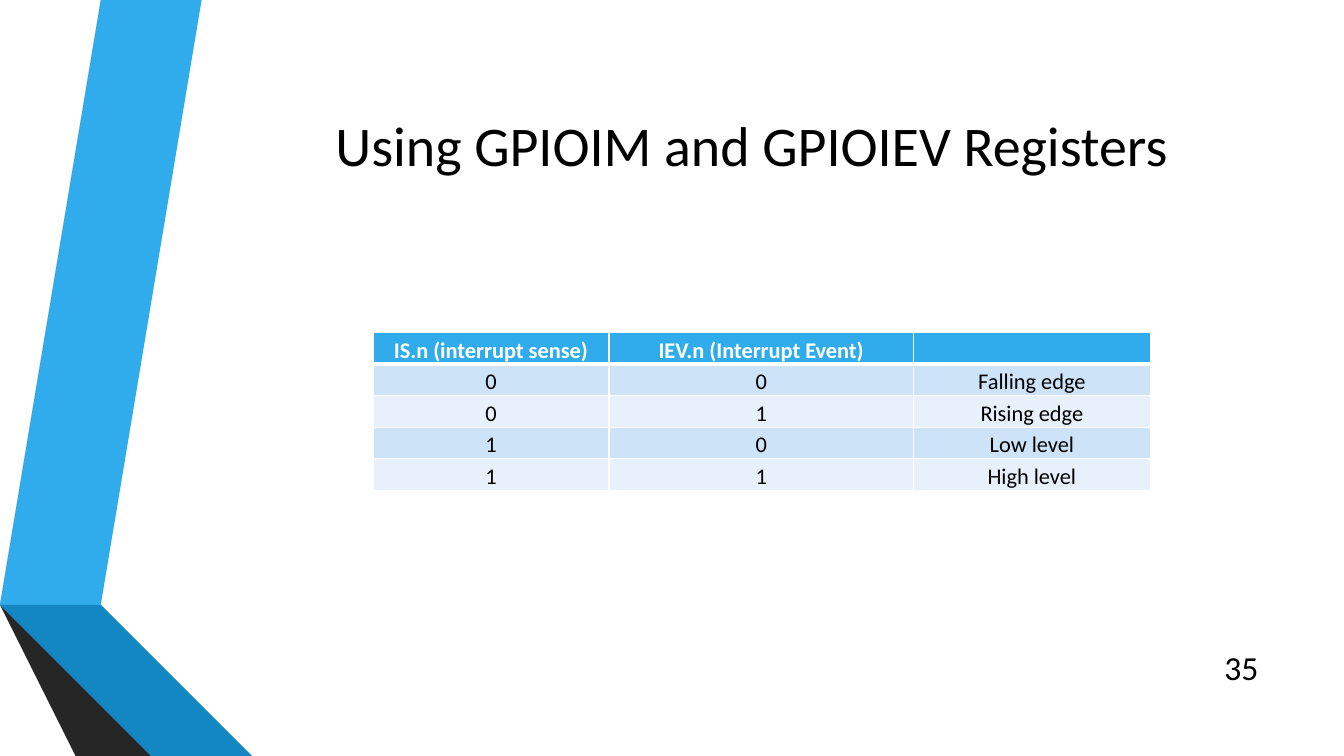
from dataclasses import dataclass

from lxml import etree
from pptx import Presentation
from pptx import util as u
from pptx.dml.color import RGBColor
from pptx.enum import text
from pptx.oxml import ns


@dataclass(frozen=True)
class Theme:
    font: str = "Calibri"
    ink: str = "000000"
    paper: str = "FFFFFF"
    blue: str = "30ACEC"
    blue_mid: str = "1287C3"
    blue_deep: str = "0C5A82"
    grey: str = "595959"
    grey_mid: str = "404040"
    grey_deep: str = "262626"
    bands: tuple = ("CDE3F8", "E8F1FB")
    title_size: int = 40
    number_size: int = 24
    table_size: int = 16


class SlideBuilder:
    def __init__(self, deck, theme):
        self.theme = theme
        self.page = deck.slides.add_slide(deck.slide_layouts[5])

    def style(self, para, size, align, color, bold=False):
        para.alignment = align
        para.font.name = self.theme.font
        para.font.size = u.Pt(size)
        para.font.bold = bold
        para.font.color.rgb = RGBColor.from_string(color)

    def place(self, box, left, top, width, height):
        box.left, box.top = u.Inches(left), u.Inches(top)
        box.width, box.height = u.Inches(width), u.Inches(height)

    def ribbon(self, color, points):
        """Draw a closed, filled outline through points given in inches."""
        builder = self.page.shapes.build_freeform(*points[0], scale=u.Inches(1))
        builder.add_line_segments(points[1:], close=True)
        shape = builder.convert_to_shape()
        shape.shadow.inherit = False
        shape.fill.solid()
        shape.fill.fore_color.rgb = RGBColor.from_string(color)
        shape.line.fill.background()

    def title(self, words, *area):
        box = self.page.shapes.title
        self.place(box, *area)
        self.fill_text(box.text_frame, words, self.theme.title_size, text.PP_ALIGN.CENTER)

    def page_number(self, number, *area):
        box = self.page.shapes.add_textbox(0, 0, 0, 0)
        self.place(box, *area)
        self.fill_text(box.text_frame, number, self.theme.number_size, text.PP_ALIGN.RIGHT)

    def fill_text(self, frame, words, size, align):
        frame.text = words
        frame.word_wrap = True
        frame.auto_size = text.MSO_AUTO_SIZE.NONE
        frame.vertical_anchor = text.MSO_ANCHOR.MIDDLE
        self.style(frame.paragraphs[0], size, align, self.theme.ink)

    def table(self, left, top, widths, row_height, rows):
        grid = self.page.shapes.add_table(
            len(rows), len(widths), u.Inches(left), u.Inches(top),
            u.Inches(sum(widths)), u.Inches(row_height * len(rows))).table
        for column, width in zip(grid.columns, widths):
            column.width = u.Inches(width)
        for r, row in enumerate(rows):
            grid.rows[r].height = u.Inches(row_height)
            for c, words in enumerate(row):
                self.cell(grid.cell(r, c), words, r)

    def cell(self, cell, words, row):
        theme = self.theme
        header = row == 0
        cell.text = words
        cell.margin_left = cell.margin_right = u.Inches(0.07)
        cell.margin_top = cell.margin_bottom = 0
        para = cell.text_frame.paragraphs[0]
        para.line_spacing = 1.15
        self.style(para, theme.table_size, text.PP_ALIGN.CENTER,
                   theme.paper if header else theme.ink, header)
        self.borders(cell, bottom=3 if header else 1, top=3 if row == 1 else 1)
        cell.fill.solid()
        color = theme.blue if header else theme.bands[(row - 1) % 2]
        cell.fill.fore_color.rgb = RGBColor.from_string(color)

    def borders(self, cell, bottom, top):
        properties = cell._tc.get_or_add_tcPr()
        for side, points in (("L", 1), ("R", 1), ("T", top), ("B", bottom)):
            line = etree.SubElement(properties, ns.qn(f"a:ln{side}"), w=str(u.Pt(points)))
            fill = etree.SubElement(line, ns.qn("a:solidFill"))
            etree.SubElement(fill, ns.qn("a:srgbClr"), val=self.theme.paper)


def main():
    deck = Presentation()
    deck.slide_width, deck.slide_height = u.Inches(13.33), u.Inches(7.5)
    theme = Theme()
    slide = SlideBuilder(deck, theme)

    ribbons = [
        (theme.blue, [(0.5, 5.78), (0.77, 5.83), (1.73, 0), (1.45, 0)]),
        (theme.grey, [(1.39, 0), (1.11, 0), (0.16, 5.73), (0.44, 5.77)]),
        (theme.grey_deep, [(0.16, 5.73), (1.45, 7.5), (1.51, 7.5)]),
        (theme.blue_deep, [(0.5, 5.79), (2.08, 7.5), (2.14, 7.5)]),
        (theme.blue_mid, [(0.5, 5.78), (2.14, 7.5), (2.83, 7.5), (0.77, 5.83)]),
        (theme.grey_mid, [(0.16, 5.73), (1.51, 7.5), (2.02, 7.5), (0.48, 5.83), (0.44, 5.77)]),
    ]
    for color, points in ribbons:
        slide.ribbon(color, points)

    slide.title("Using GPIOIM and GPIOIEV Registers", 1.57, 0.82, 11.77, 1.21)
    slide.table(3.7, 3.3, (2.34, 3.02, 2.35), 0.31, [
        ("IS.n (interrupt sense)", "IEV.n (Interrupt Event)", ""),
        ("0", "0", "Falling edge"),
        ("0", "1", "Rising edge"),
        ("1", "0", "Low level"),
        ("1", "1", "High level"),
    ])
    slide.page_number("35", 11.98, 6.42, 0.6, 0.4)
    deck.save("out.pptx")


if __name__ == "__main__":
    main()
